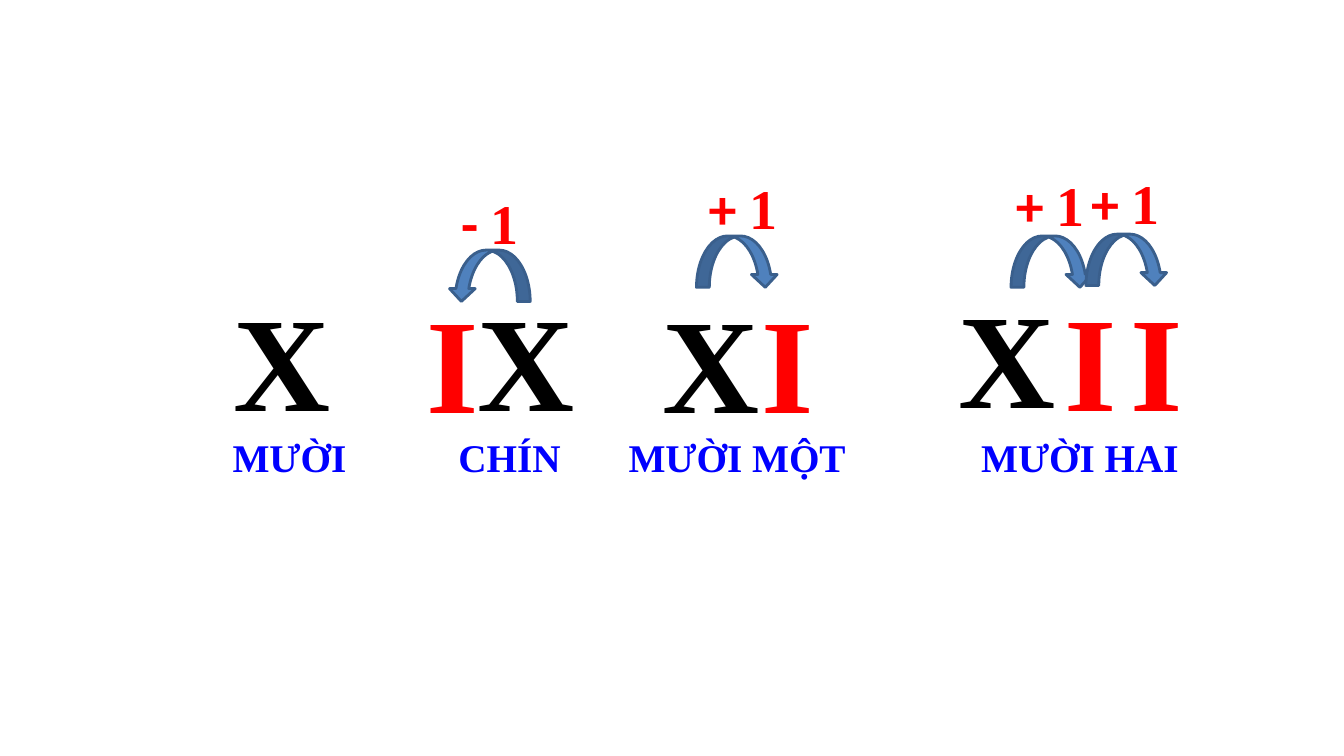
"""Build a slide that explains the Roman numerals ten, nine, eleven and twelve."""
from dataclasses import dataclass

from pptx import Presentation
from pptx.dml.color import RGBColor
from pptx.enum import shapes, text
from pptx.util import Pt

RED = RGBColor(0xFF, 0x00, 0x00)
BLACK = RGBColor(0x00, 0x00, 0x00)
BLUE = RGBColor(0x00, 0x00, 0xFF)
ARROW_FILL = RGBColor(0x4F, 0x81, 0xBD)
ARROW_LINE = RGBColor(0x3A, 0x5F, 0x8C)
SERIF = "Times New Roman"
SANS = "Calibri"
LEFT = text.PP_ALIGN.LEFT
CENTER = text.PP_ALIGN.CENTER


@dataclass
class Label:
    """A line of text in one font."""
    words: str
    left: float
    top: float
    width: float
    height: float
    size: float
    color: RGBColor
    align: text.PP_ALIGN = CENTER


@dataclass
class Step:
    """A curved arrow with the sign of its step above it."""
    sign: str
    arrow_left: float
    arrow_top: float
    sign_left: float
    sign_top: float


def numeral(letter: str, left: float, top: float, width: float = 130.3) -> Label:
    """Describe a large numeral, red for I and black for X."""
    return Label(letter, left, top, width, 123.8, 96, RED if letter == "I" else BLACK)


def name(words: str, left: float, width: float, align: text.PP_ALIGN = CENTER) -> Label:
    """Describe the name written under a number."""
    return Label(words, left, 306, width, 41, 28, BLUE, align)


ITEMS = [
    numeral("I", 254.9, 195.8, 136.8),
    Step("-", 331.2, 167.8, 322.3, 131),
    numeral("X", 310.7, 194.4),
    numeral("X", 133.2, 194.7, 136.8),
    numeral("I", 497.5, 195.8),
    name("MƯỜI", 157, 99.4),
    name("CHÍN", 320.4, 105.8, LEFT),
    name("MƯỜI MỘT", 418.5, 216),
    numeral("X", 442.8, 195.8),
    numeral("I", 713.8, 194.4),
    name("MƯỜI HAI", 693.7, 222.5, LEFT),
    numeral("X", 654.5, 192.2),
    Step("+", 508.3, 157.7, 499, 120.6),
    Step("+", 733, 157.7, 718.6, 118.1),
    numeral("I", 761, 194.4),
    Step("+", 786.5, 156.4, 772.2, 117),
]


def add_label(slide, label: Label):
    """Draw a label and return its paragraph."""
    s = slide.shapes.add_textbox(Pt(label.left), Pt(label.top), Pt(label.width), Pt(label.height))
    tf = s.text_frame
    tf.word_wrap = True
    tf.auto_size = text.MSO_AUTO_SIZE.SHAPE_TO_FIT_TEXT
    tf.text = label.words
    p = tf.paragraphs[0]
    p.alignment = label.align
    format_run(p.runs[0], SERIF, label.size, label.color)
    return p


def format_run(r, font: str, size: float, color: RGBColor) -> None:
    """Set a run in bold with the given font, size and colour."""
    r.font.name = font
    r.font.size = Pt(size)
    r.font.bold = True
    r.font.color.rgb = color


def add_step(slide, step: Step) -> None:
    """Draw the arrow of a step and its sign, turned back for a minus."""
    s = slide.shapes.add_shape(shapes.MSO_SHAPE.CURVED_RIGHT_ARROW,
                               Pt(step.arrow_left), Pt(step.arrow_top), Pt(36.7), Pt(58.3))
    s.shadow.inherit = False
    s.fill.solid()
    s.fill.fore_color.rgb = ARROW_FILL
    s.line.color.rgb = ARROW_LINE
    s.line.width = Pt(2)
    xfrm = s._element.spPr.xfrm
    xfrm.set("flipV", "1")
    s.rotation = 90
    if step.sign == "-":
        xfrm.set("flipH", "1")
        s.rotation = 270

    p = add_label(slide, Label(step.sign + " ", step.sign_left, step.sign_top, 78.5, 55.4, 40, RED, LEFT))
    p.runs[0].font.name = SANS
    r = p.add_run()
    r.text = "1"
    format_run(r, SERIF, 40, RED)


def main() -> None:
    """Build and save the slide."""
    prs = Presentation()
    prs.slide_width = Pt(960)
    prs.slide_height = Pt(540)
    slide = prs.slides.add_slide(prs.slide_layouts[6])
    for item in ITEMS:
        if isinstance(item, Step):
            add_step(slide, item)
        else:
            add_label(slide, item)
    prs.save("out.pptx")


if __name__ == "__main__":
    main()
